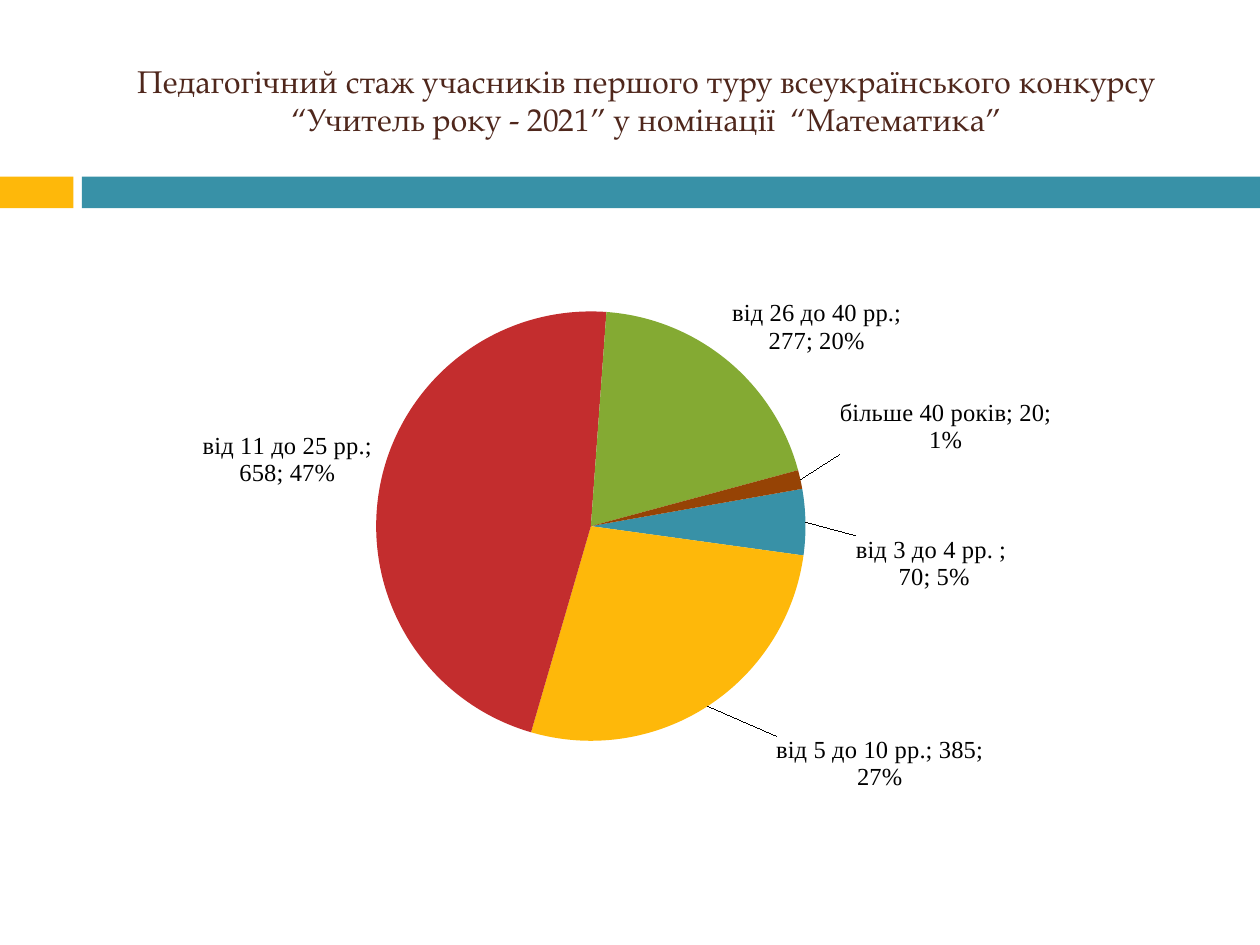
import pptx
import pptx.chart.data
import pptx.dml.color
import pptx.enum.chart
import pptx.enum.shapes
import pptx.enum.text
import pptx.oxml
import pptx.oxml.ns
import pptx.util
from dataclasses import dataclass

Cm = pptx.util.Cm
Pt = pptx.util.Pt


@dataclass(frozen=True)
class Theme:
    gold: str = "FEB80A"
    teal: str = "3891A7"
    red: str = "C32D2E"
    green: str = "84AA33"
    brown: str = "964305"
    dark: str = "4F271C"
    black: str = "000000"
    head: str = "TeX Gyre Pagella"
    note: str = "Times New Roman"
    base: str = "Calibri"
    big: int = 18
    mid: int = 14
    small: int = 10


def put(item, **form):
    for name, value in form.items():
        setattr(item, name, value)


def color(code):
    return pptx.dml.color.RGBColor.from_string(code)


def node(tag, **vals):
    root = pptx.oxml.parse_xml(f"<c:{tag} {pptx.oxml.ns.nsdecls('c')}/>")
    root.attrib.update(vals)
    return root


def layout(**vals):
    root = node("layout")
    frame = node("manualLayout")
    root.append(frame)
    for tag, value in vals.items():
        frame.append(node(tag, val=str(value)))
    return root


class Page:
    def __init__(self, slide, theme):
        self.slide = slide
        self.theme = theme

    def font(self, font, name, size, tone):
        put(font, name=name, size=Pt(size))
        font.color.rgb = color(tone)

    def bar(self, box, tone):
        kind = pptx.enum.shapes.MSO_SHAPE.RECTANGLE
        shape = self.slide.shapes.add_shape(kind, *map(Cm, box))
        shape.shadow.inherit = False
        shape.fill.solid()
        shape.fill.fore_color.rgb = color(tone)
        shape.line.fill.background()

    def title(self, box, text):
        frame = self.slide.shapes.add_textbox(*map(Cm, box)).text_frame
        put(frame, word_wrap=True,
            vertical_anchor=pptx.enum.text.MSO_ANCHOR.MIDDLE)
        para = frame.paragraphs[0]
        put(para, text=text, alignment=pptx.enum.text.PP_ALIGN.CENTER)
        style = self.theme
        self.font(para.runs[0].font, style.head, style.big, style.dark)

    def pie(self, box, rows, plot, start, moves, notes):
        style = self.theme
        data = pptx.chart.data.CategoryChartData()
        data.categories = [row[0] for row in rows]
        data.add_series("Series 1", [row[1] for row in rows])
        kind = pptx.enum.chart.XL_CHART_TYPE.PIE
        chart = self.slide.shapes.add_chart(kind, *map(Cm, box), data).chart
        put(chart, has_legend=False, has_title=False)
        self.font(chart.font, style.base, style.small, style.black)
        chart.plots[0].vary_by_categories = True
        series = chart.plots[0].series[0]
        outer = pptx.enum.chart.XL_LABEL_POSITION.OUTSIDE_END
        labels = series.data_labels
        put(labels, show_value=True, show_category_name=True,
            show_percentage=True, position=outer)
        self.font(labels.font, style.note, style.mid, style.black)
        for i, row in enumerate(rows):
            fill = series.points[i].format.fill
            fill.solid()
            fill.fore_color.rgb = color(row[2])
        for i in moves:
            label = series.points[i].data_label
            label.position = outer
            if i in notes:
                label.text_frame.text = notes[i]
                for para in label.text_frame.paragraphs:
                    for run in para.runs:
                        self.font(run.font, style.note, style.mid, style.black)
            else:
                self.font(label.font, style.note, style.mid, style.black)
        self.tune(chart.element, plot, start, moves)

    def tune(self, root, plot, start, moves):
        for label, (x, y) in zip(root.xpath(".//c:dLbl"), moves.values()):
            label.insert(1, layout(x=x, y=y))
            for tag in ("showVal", "showCatName", "showPercent"):
                label.xpath(f"c:{tag}")[0].set("val", "1")
        for mark in root.xpath(".//c:showBubbleSize"):
            gap = node("separator")
            gap.text = "; "
            mark.addnext(gap)
        for old in root.xpath(".//c:plotArea/c:layout | .//c:firstSliceAng"):
            old.getparent().remove(old)
        x, y, w, h = plot
        root.xpath(".//c:plotArea")[0].insert(0, layout(
            layoutTarget="inner", xMode="edge", yMode="edge",
            x=x, y=y, w=w, h=h))
        root.xpath(".//c:pieChart")[0].append(
            node("firstSliceAng", val=str(start)))


def main():
    deck = pptx.Presentation()
    put(deck, slide_width=Cm(25.4), slide_height=Cm(19.05))
    theme = Theme()
    page = Page(deck.slides.add_slide(deck.slide_layouts[6]), theme)
    page.bar((0, 3.56, 1.48, 0.64), theme.gold)
    page.bar((1.65, 3.56, 23.75, 0.64), theme.teal)
    page.title((1.7, 0.64, 22.66, 2.74),
               "Педагогічний стаж учасників першого туру всеукраїнського "
               "конкурсу “Учитель року - 2021” у номінації  “Математика”")
    rows = [
        ("від 3 до 4 рр. ", 70, theme.teal),
        ("від 5 до 10 рр.", 385, theme.gold),
        ("від 11 до 25 рр.", 658, theme.red),
        ("від 26 до 40 рр.", 277, theme.green),
        ("більше 40 років", 20, theme.brown),
    ]
    page.pie((2.39, 4.95, 21.64, 11.91), rows,
             plot=(0.24, 0.11, 0.4, 0.73), start=80,
             moves={0: (0.04, 0.07), 1: (0.06, 0.04), 4: (0.03, -0.04)},
             notes={0: "від 3 до 4 рр. ; \n70; 5%"})
    deck.save("out.pptx")


if __name__ == "__main__":
    main()
